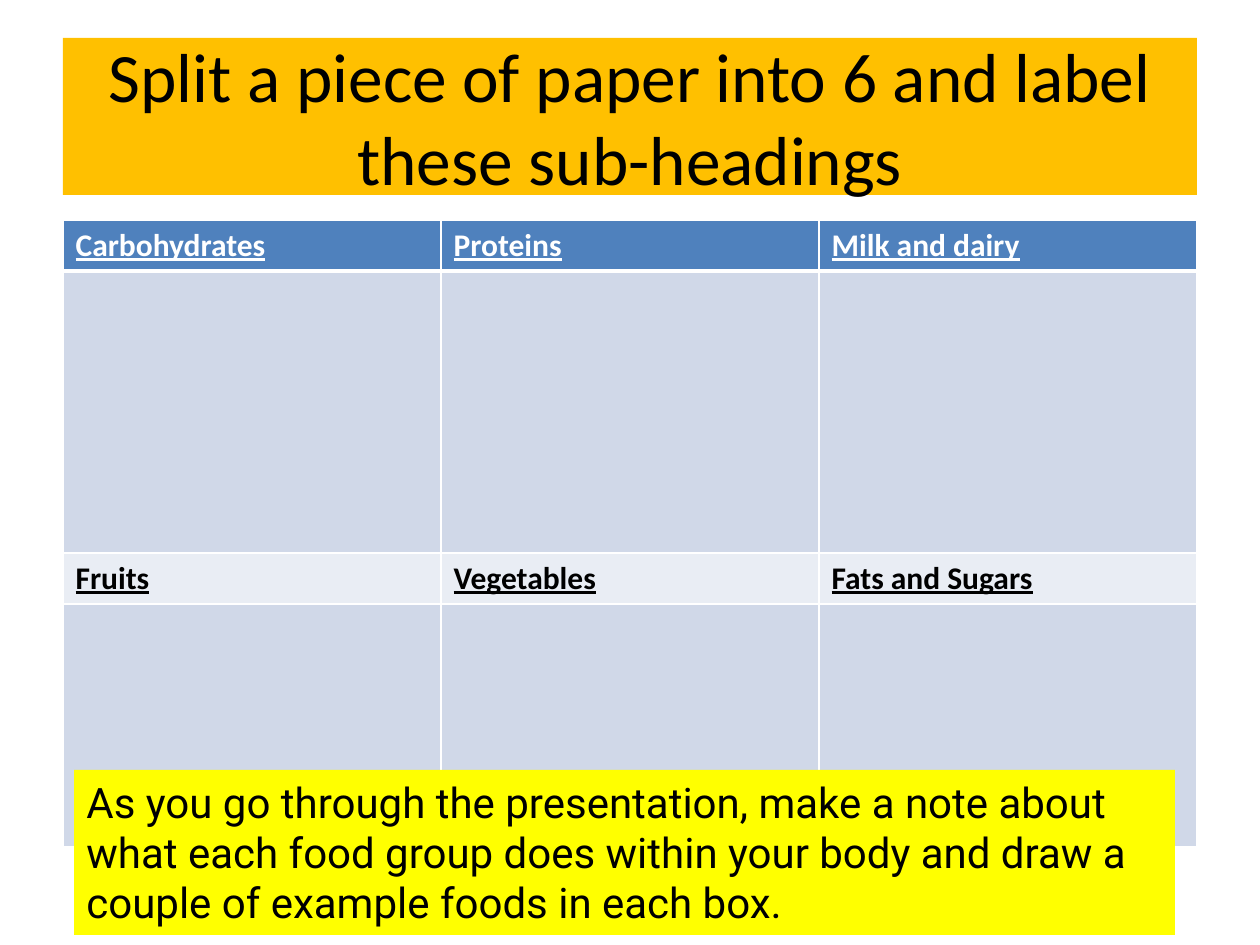
from dataclasses import dataclass

from lxml import etree
from pptx import Presentation
from pptx import util as u
from pptx.dml.color import RGBColor
from pptx.enum import shapes, text
from pptx.oxml.ns import qn

SCALE = 914400 / 126  # EMU in one px


def px(length):
    return u.Emu(round(length * SCALE))


@dataclass(frozen=True)
class Theme:
    title_fill: str = "FFC000"
    note_fill: str = "FFFF00"
    header_fill: str = "4F81BD"
    box_fill: str = "D0D8E8"
    label_fill: str = "E9EDF4"
    dark: str = "000000"
    light: str = "FFFFFF"
    heading_font: str = "Calibri"
    note_font: str = "Roboto"
    title_size: float = 39.6
    label_size: int = 18
    note_size: int = 24
    border: int = 1
    header_border: int = 3


class SlideBuilder:
    def __init__(self, slide, theme):
        self.slide = slide
        self.theme = theme

    def add_run(self, paragraph, words, font, size, color, label=False):
        run = paragraph.add_run()
        run.text = words
        run.font.name = font
        run.font.size = u.Pt(size)
        run.font.color.rgb = RGBColor.from_string(color)
        if label:
            run.font.bold = True
            run.font.underline = True

    def panel(self, box, fill, words, font, size, align, anchor):
        shape = self.slide.shapes.add_shape(
            shapes.MSO_SHAPE.RECTANGLE, *map(px, box))
        shape.shadow.inherit = False
        shape.fill.solid()
        shape.fill.fore_color.rgb = RGBColor.from_string(fill)
        shape.line.fill.background()
        frame = shape.text_frame
        frame.word_wrap = True
        frame.vertical_anchor = anchor
        paragraph = frame.paragraphs[0]
        paragraph.alignment = align
        self.add_run(paragraph, words, font, size, self.theme.dark)

    def cell_borders(self, cell, top, bottom):
        properties = cell._tc.get_or_add_tcPr()
        sides = {"lnL": self.theme.border, "lnR": self.theme.border,
                 "lnT": top, "lnB": bottom}
        for index, (side, width) in enumerate(sides.items()):
            line = etree.Element(qn(f"a:{side}"), w=str(u.Pt(width)))
            fill = etree.SubElement(line, qn("a:solidFill"))
            etree.SubElement(fill, qn("a:srgbClr"), val=self.theme.light)
            properties.insert(index, line)

    def table(self, left, top, column_width, rows):
        """Each row is (height, fill, text colour, labels)."""
        theme = self.theme
        columns = len(rows[0][3])
        height = sum(row[0] for row in rows)
        table = self.slide.shapes.add_table(
            len(rows), columns, px(left), px(top),
            px(column_width * columns), px(height)).table
        for column in table.columns:
            column.width = px(column_width)
        for index, (row_height, fill, color, labels) in enumerate(rows):
            table.rows[index].height = px(row_height)
            above = theme.header_border if index == 1 else theme.border
            below = theme.header_border if index == 0 else theme.border
            for cell, label in zip(table.rows[index].cells, labels):
                cell.fill.solid()
                cell.fill.fore_color.rgb = RGBColor.from_string(fill)
                self.cell_borders(cell, above, below)
                if label:
                    self.add_run(cell.text_frame.paragraphs[0], label,
                                 theme.heading_font, theme.label_size,
                                 color, label=True)


def main():
    theme = Theme()
    presentation = Presentation()
    presentation.slide_width, presentation.slide_height = px(1260), px(945)
    slide = presentation.slides.add_slide(presentation.slide_layouts[6])
    builder = SlideBuilder(slide, theme)

    # Title
    builder.panel((63, 38, 1134, 157), theme.title_fill,
                  "Split a piece of paper into 6 and label these sub-headings",
                  theme.heading_font, theme.title_size,
                  text.PP_ALIGN.CENTER, text.MSO_ANCHOR.MIDDLE)

    # Six food groups, each label above an empty box
    empty = ("", "", "")
    builder.table(63, 220, 378, [
        (51, theme.header_fill, theme.light,
         ("Carbohydrates", "Proteins", "Milk and dairy")),
        (282, theme.box_fill, theme.dark, empty),
        (51, theme.label_fill, theme.dark,
         ("Fruits", "Vegetables", "Fats and Sugars")),
        (243, theme.box_fill, theme.dark, empty),
    ])

    # Instruction note
    builder.panel((74, 770, 1101, 165), theme.note_fill,
                  "As you go through the presentation, make a note about "
                  "what each food group does within your body and draw a "
                  "couple of example foods in each box.",
                  theme.note_font, theme.note_size,
                  text.PP_ALIGN.LEFT, text.MSO_ANCHOR.TOP)

    presentation.save("out.pptx")


if __name__ == "__main__":
    main()
